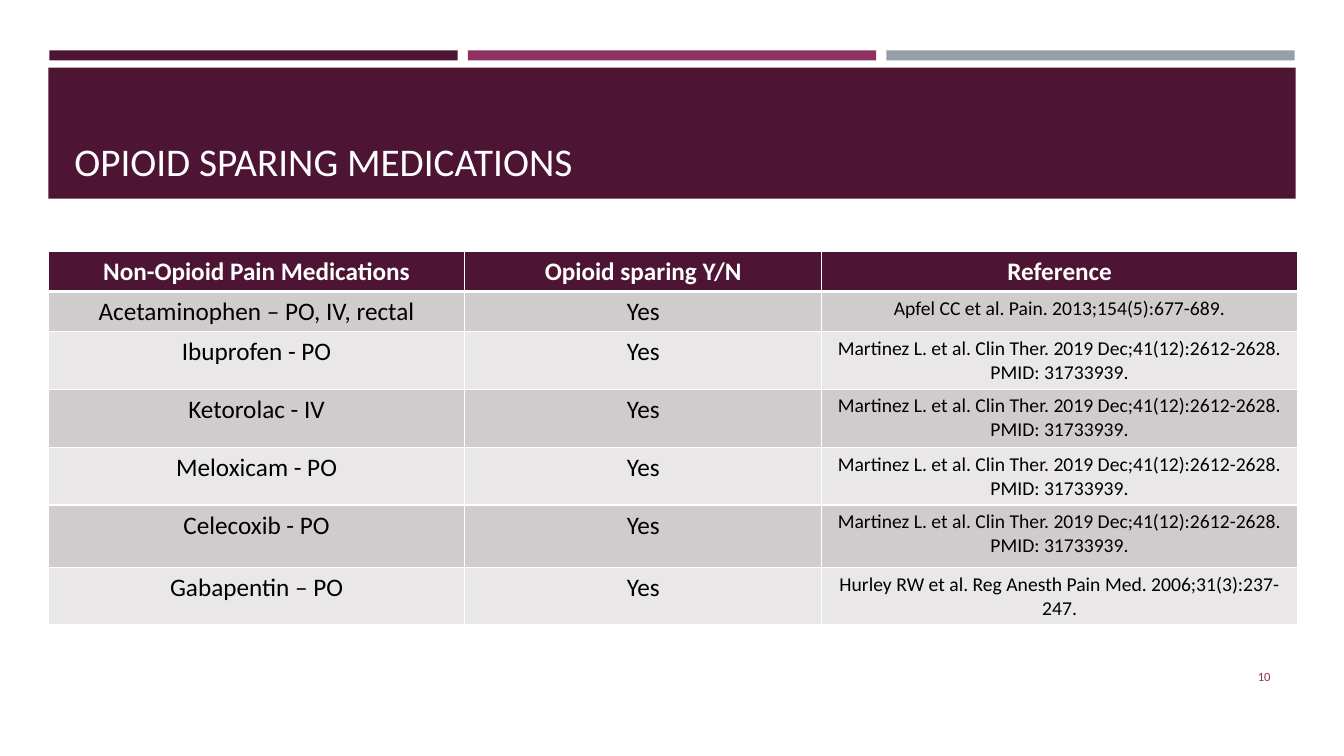
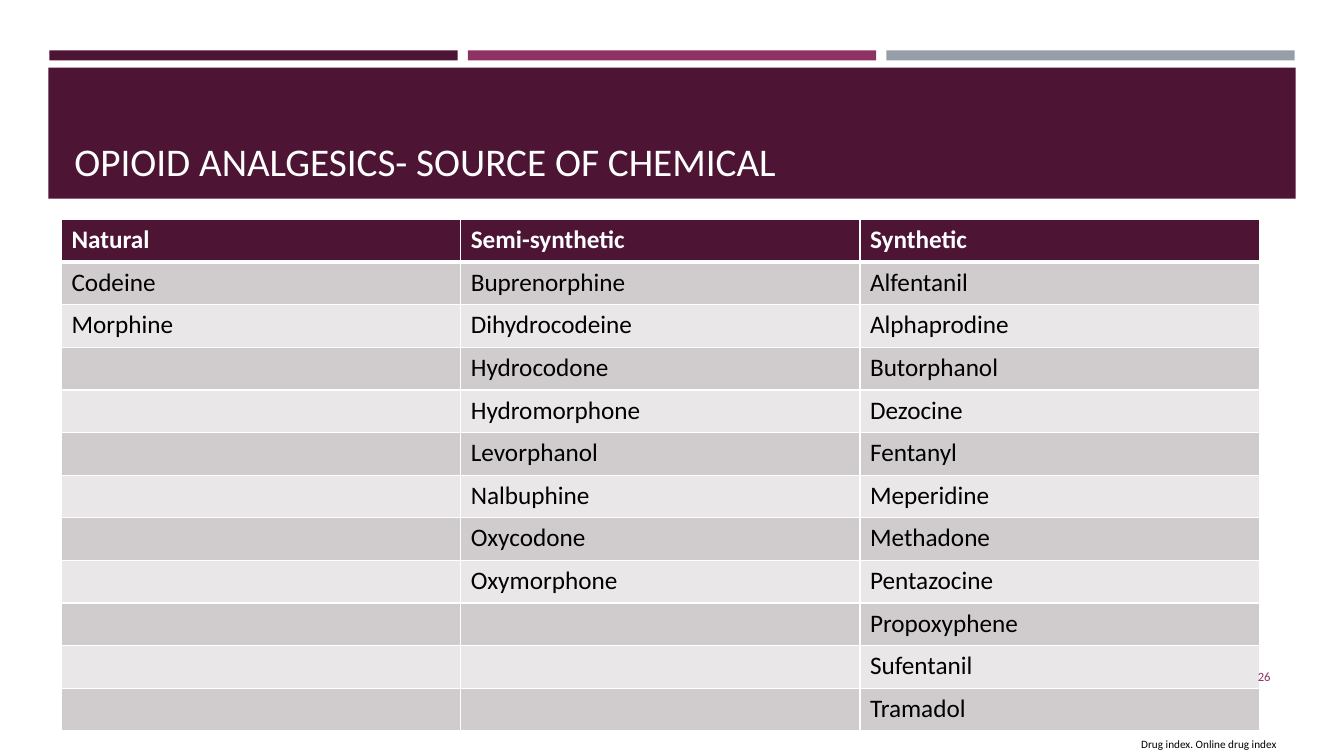
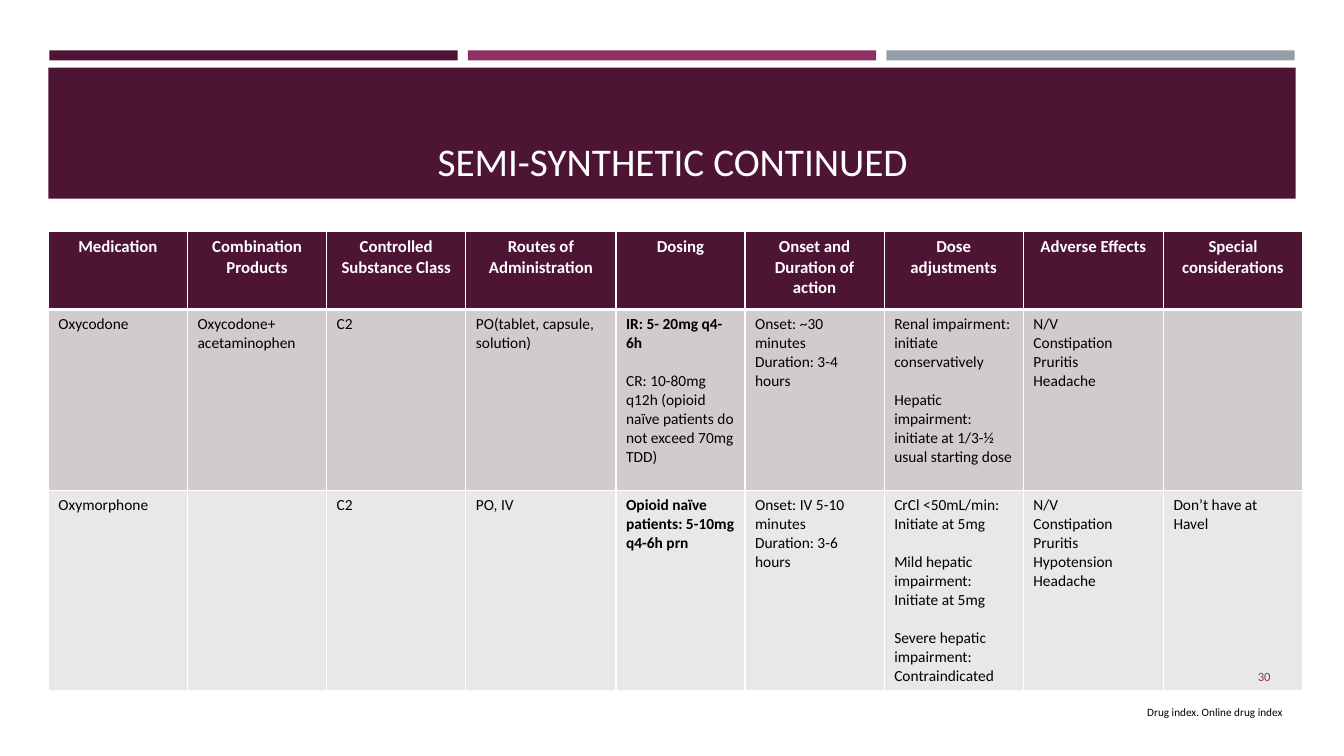
import itertools

import pptx
import pptx.dml.color
import pptx.enum.shapes
import pptx.enum.text
import pptx.oxml
import pptx.oxml.ns
import pptx.util

Inches = pptx.util.Inches
Pt = pptx.util.Pt
ALIGN = pptx.enum.text.PP_ALIGN
ANCHOR = pptx.enum.text.MSO_ANCHOR

FONT = "Calibri"
COLORS = {
    "plum": "4D1434",
    "magenta": "903163",
    "gray": "969FA7",
    "band_dark": "D0CCCE",
    "band_light": "E9E7E8",
    "white": "FFFFFF",
    "black": "000000",
}
BOLD = {"bold": True}
GAP = {"space_before": 13.4}  # one line of 11 pt text


def rgb(name):
    return pptx.dml.color.RGBColor.from_string(COLORS[name])


def write(frame, content, size=18, color="black", bold=False, align=ALIGN.LEFT):
    """Fill a text frame; content is a text or a list of texts and (text, format) pairs."""
    entries = content if isinstance(content, list) else [content]
    for index, entry in enumerate(entries):
        text, extra = entry if isinstance(entry, tuple) else (entry, {})
        paragraph = frame.paragraphs[0] if index == 0 else frame.add_paragraph()
        paragraph.alignment = align
        paragraph.space_before = Pt(extra.get("space_before", 0))
        run = paragraph.add_run()
        run.text = text
        run.font.name = FONT
        run.font.size = Pt(size)
        run.font.bold = extra.get("bold", bold)
        run.font.color.rgb = rgb(color)


class Deck:
    """Holds the presentation, its style and the current slide."""

    def __init__(self):
        self.presentation = pptx.Presentation()
        self.presentation.slide_width = Inches(13.33)
        self.presentation.slide_height = Inches(7.5)
        self.slide = None

    def start_slide(self, title, align=ALIGN.LEFT):
        self.slide = self.presentation.slides.add_slide(
            self.presentation.slide_layouts[6])
        for index, color in enumerate(("plum", "magenta", "gray")):
            self.band(0.49 + index * 4.15, 0.5, 4.05, 0.1, color)
        self.band(0.48, 0.67, 12.37, 1.3, "plum")
        self.text(title, 0.64, 0.77, 12.06, 1.11, anchor=ANCHOR.BOTTOM,
                  size=28, color="white", align=align)

    def band(self, left, top, width, height, color):
        shape = self.slide.shapes.add_shape(
            pptx.enum.shapes.MSO_SHAPE.RECTANGLE,
            Inches(left), Inches(top), Inches(width), Inches(height))
        shape.shadow.inherit = False
        shape.fill.solid()
        shape.fill.fore_color.rgb = rgb(color)
        shape.line.fill.background()

    def text(self, content, left, top, width, height, anchor=ANCHOR.TOP, **style):
        box = self.slide.shapes.add_textbox(
            Inches(left), Inches(top), Inches(width), Inches(height))
        box.text_frame.word_wrap = True
        box.text_frame.vertical_anchor = anchor
        write(box.text_frame, content, **style)

    def page_number(self, number):
        self.text(str(number), 11.55, 6.51, 1.15, 0.4, anchor=ANCHOR.MIDDLE,
                  size=9, color="magenta", align=ALIGN.RIGHT)

    def source(self, content, left, top):
        self.text(content, left, top, 1.9, 0.24, size=8)

    def table(self, left, top, widths, heights, rows, header_size=18,
              sizes=None, header_align=ALIGN.LEFT, align=ALIGN.LEFT):
        """Draw a banded table; sizes gives the body text size of each column."""
        sizes = sizes or [18] * len(widths)
        table = self.slide.shapes.add_table(
            len(rows), len(widths), Inches(left), Inches(top),
            Inches(sum(widths)), Inches(sum(heights))).table
        table.horz_banding = False
        for column, width in zip(table.columns, widths):
            column.width = Inches(width)
        for index, (row, height, values) in enumerate(zip(table.rows, heights, rows)):
            row.height = Inches(height)
            for cell, value, size in zip(row.cells, values, sizes):
                if index == 0:
                    fill = "plum"
                    style = dict(size=header_size, color="white", bold=True,
                                 align=header_align)
                else:
                    fill = "band_dark" if index % 2 else "band_light"
                    style = dict(size=size, align=align)
                self.borders(cell, top=3 if index == 1 else 1,
                             bottom=3 if index == 0 else 1)
                cell.fill.solid()
                cell.fill.fore_color.rgb = rgb(fill)
                if value:
                    write(cell.text_frame, value, **style)

    def borders(self, cell, top, bottom):
        properties = cell._tc.get_or_add_tcPr()
        for side, points in (("L", 1), ("R", 1), ("T", top), ("B", bottom)):
            properties.append(pptx.oxml.parse_xml(
                f'<a:ln{side} {pptx.oxml.ns.nsdecls("a")} w="{Pt(points)}">'
                f'<a:solidFill><a:srgbClr val="{COLORS["white"]}"/></a:solidFill>'
                f'</a:ln{side}>'))


def sparing_slide(deck):
    deck.start_slide("OPIOID SPARING MEDICATIONS")
    martinez = ("Martinez L. et al. Clin Ther. 2019 Dec;41(12):2612-2628. "
                "PMID: 31733939.")
    references = [
        ("Acetaminophen – PO, IV, rectal", "Apfel CC et al. Pain. 2013;154(5):677-689."),
        ("Ibuprofen - PO", martinez),
        ("Ketorolac - IV", martinez),
        ("Meloxicam - PO", martinez),
        ("Celecoxib - PO", martinez),
        ("Gabapentin – PO",
         "Hurley RW et al. Reg Anesth Pain Med. 2006;31(3):237-247."),
    ]
    rows = [("Non-Opioid Pain Medications", "Opioid sparing Y/N", "Reference")]
    rows += [(medication, "Yes", reference) for medication, reference in references]
    deck.table(0.48, 2.49, [4.13, 3.54, 4.72],
               [0.4, 0.4, 0.57, 0.58, 0.57, 0.62, 0.57], rows,
               sizes=[18, 18, 14], header_align=ALIGN.CENTER, align=ALIGN.CENTER)
    deck.page_number(10)


def chemical_source_slide(deck):
    deck.start_slide("OPIOID ANALGESICS- SOURCE OF CHEMICAL")
    natural = ["Natural", "Codeine", "Morphine"]
    semi_synthetic = ["Semi-synthetic", "Buprenorphine", "Dihydrocodeine",
                      "Hydrocodone", "Hydromorphone", "Levorphanol", "Nalbuphine",
                      "Oxycodone", "Oxymorphone"]
    synthetic = ["Synthetic", "Alfentanil", "Alphaprodine", "Butorphanol", "Dezocine",
                 "Fentanyl", "Meperidine", "Methadone", "Pentazocine", "Propoxyphene",
                 "Sufentanil", "Tramadol"]
    rows = list(itertools.zip_longest(natural, semi_synthetic, synthetic))
    deck.table(0.61, 2.18, [3.96] * 3, [5.07 / len(rows)] * len(rows), rows)
    deck.source("Drug index. Online drug index", 11.22, 7.27)
    deck.page_number(26)


def semi_synthetic_slide(deck):
    deck.start_slide("SEMI-SYNTHETIC CONTINUED", align=ALIGN.CENTER)
    rows = [
        ["Medication", "Combination Products", "Controlled Substance Class",
         "Routes of Administration", "Dosing", "Onset and Duration of action",
         "Dose adjustments", "Adverse Effects", "Special considerations"],
        ["Oxycodone", "Oxycodone+ acetaminophen", "C2", "PO(tablet, capsule, solution)",
         [("IR: 5- 20mg q4-6h", BOLD),
          ("CR: 10-80mg q12h (opioid naïve patients do not exceed 70mg TDD)", GAP)],
         ["Onset: ~30 minutes", "Duration: 3-4 hours"],
         ["Renal impairment: initiate conservatively",
          ("Hepatic impairment: initiate at 1/3-½ usual starting dose", GAP)],
         ["N/V", "Constipation", "Pruritis", "Headache"], None],
        ["Oxymorphone", None, "C2", "PO, IV",
         [("Opioid naïve patients: 5-10mg q4-6h prn", BOLD)],
         ["Onset: IV 5-10 minutes", "Duration: 3-6 hours"],
         ["CrCl <50mL/min: Initiate at 5mg",
          ("Mild hepatic impairment: Initiate at 5mg", GAP),
          ("Severe hepatic impairment: Contraindicated", GAP)],
         ["N/V", "Constipation", "Pruritis", "Hypotension", "Headache"],
         "Don’t have at Havel"],
    ]
    widths = [1.38, 1.38, 1.38, 1.49, 1.28, 1.38, 1.38, 1.39, 1.38]
    deck.table(0.48, 2.3, widths, [0.77, 1.8, 1.98], rows, header_size=12,
               sizes=[11] * len(widths), header_align=ALIGN.CENTER)
    deck.source("Drug index. Online drug index", 11.28, 6.95)
    deck.page_number(30)


def main():
    deck = Deck()
    sparing_slide(deck)
    chemical_source_slide(deck)
    semi_synthetic_slide(deck)
    deck.presentation.save("out.pptx")


if __name__ == "__main__":
    main()
